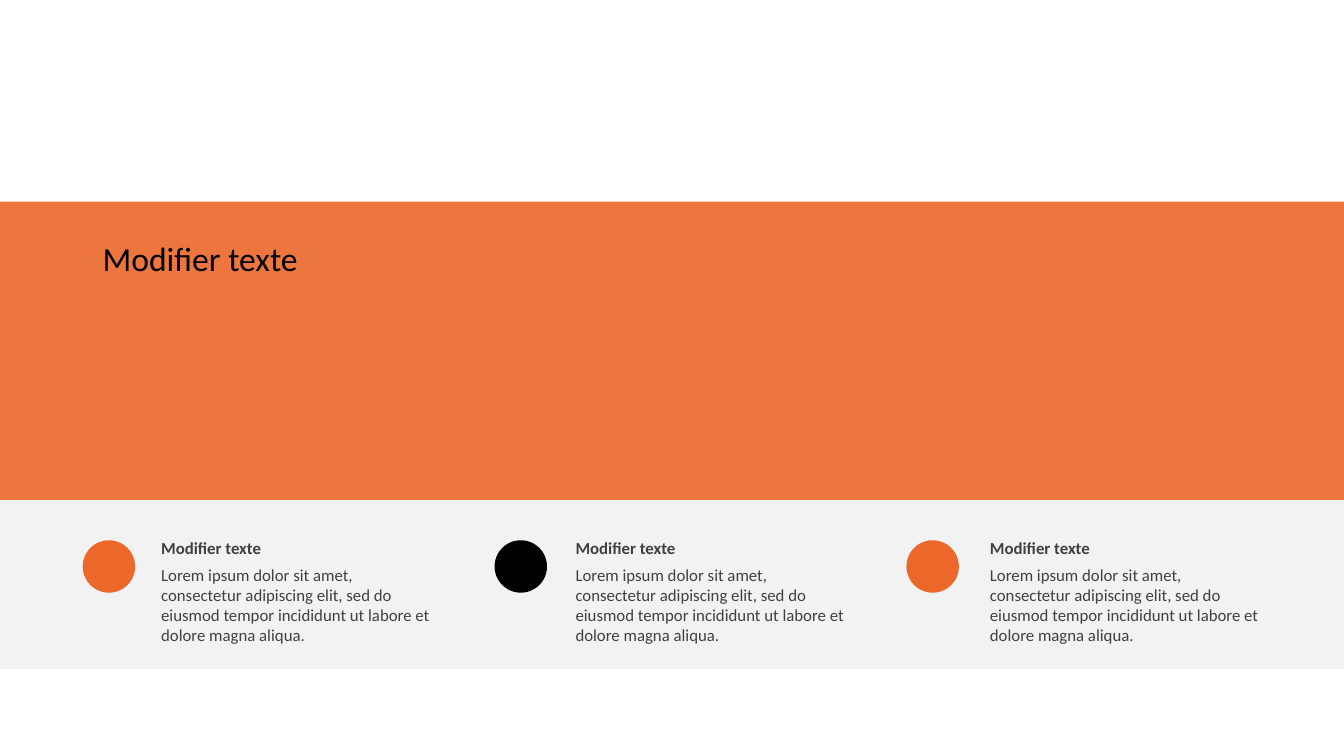
"""Build a slide with an orange title band above three captioned circles."""
from dataclasses import dataclass

from lxml import etree
from pptx import Presentation
from pptx.dml.color import RGBColor
from pptx.enum.shapes import MSO_SHAPE
from pptx.enum.text import MSO_AUTO_SIZE
from pptx.oxml.ns import qn
from pptx.util import Inches, Pt

RECTANGLE = MSO_SHAPE.RECTANGLE
OVAL = MSO_SHAPE.OVAL
FIT_SHAPE = MSO_AUTO_SIZE.SHAPE_TO_FIT_TEXT
NO_FIT = MSO_AUTO_SIZE.NONE


@dataclass(frozen=True)
class Theme:
    font: str = "Calibri"
    orange: RGBColor = RGBColor(0xEC, 0x67, 0x2A)
    black: RGBColor = RGBColor(0x00, 0x00, 0x00)
    grey: RGBColor = RGBColor(0x40, 0x40, 0x40)
    title_size: Pt = Pt(24)
    caption_size: Pt = Pt(12)


def add_filled_shape(kind, left, top, width, height, color, opacity=100):
    """Add a borderless shape with a solid fill of the given opacity percentage."""
    shape = slide.shapes.add_shape(
        kind, Inches(left), Inches(top), Inches(width), Inches(height))
    shape.shadow.inherit = False
    shape.line.fill.background()
    shape.fill.solid()
    shape.fill.fore_color.rgb = color
    if opacity < 100:
        color_element = shape.fill._xPr.find(f".//{qn('a:srgbClr')}")
        etree.SubElement(color_element, qn("a:alpha"), val=str(opacity * 1000))


def add_text(shapes, text, left, top, width, height, size, color, bold=False, fit=FIT_SHAPE):
    """Add a wrapped one-paragraph text box and return its paragraph."""
    box = shapes.add_textbox(Inches(left), Inches(top), Inches(width), Inches(height))
    box.text_frame.word_wrap = True
    box.text_frame.auto_size = fit
    paragraph = box.text_frame.paragraphs[0]
    paragraph.text = text
    paragraph.font.name = theme.font
    paragraph.font.size = size
    paragraph.font.bold = bold
    paragraph.font.color.rgb = color
    return paragraph


theme = Theme()
presentation = Presentation()
presentation.slide_width = Inches(13.33)
presentation.slide_height = Inches(7.5)
slide = presentation.slides.add_slide(presentation.slide_layouts[6])

add_filled_shape(RECTANGLE, 0, 2, 13.33, 2.96, theme.orange, opacity=90)
add_filled_shape(RECTANGLE, 0, 4.96, 13.33, 1.68, theme.black, opacity=5)

title = add_text(slide.shapes, "Modifier texte", 0.92, 2.36, 11.5, 2.68,
                 theme.title_size, theme.black, fit=NO_FIT)
title.line_spacing = 0.9

heading = "Modifier texte"
body = ("Lorem ipsum dolor sit amet, consectetur adipiscing elit, sed do "
        "eiusmod tempor incididunt ut labore et dolore magna aliqua.")
circle_left, circle_pitch = 0.82, 4.085
caption_left, caption_pitch = 1.5, 4.11

for column, circle_color in enumerate((theme.orange, theme.black, theme.orange)):
    add_filled_shape(OVAL, circle_left + column * circle_pitch, 5.36, 0.52, 0.52, circle_color)
    left = caption_left + column * caption_pitch
    caption = slide.shapes.add_group_shape()
    add_text(caption.shapes, body, left, 5.55, 2.93, 0.91, theme.caption_size, theme.grey)
    add_text(caption.shapes, heading, left, 5.29, 2.93, 0.3, theme.caption_size, theme.grey,
             bold=True)

presentation.save("out.pptx")
